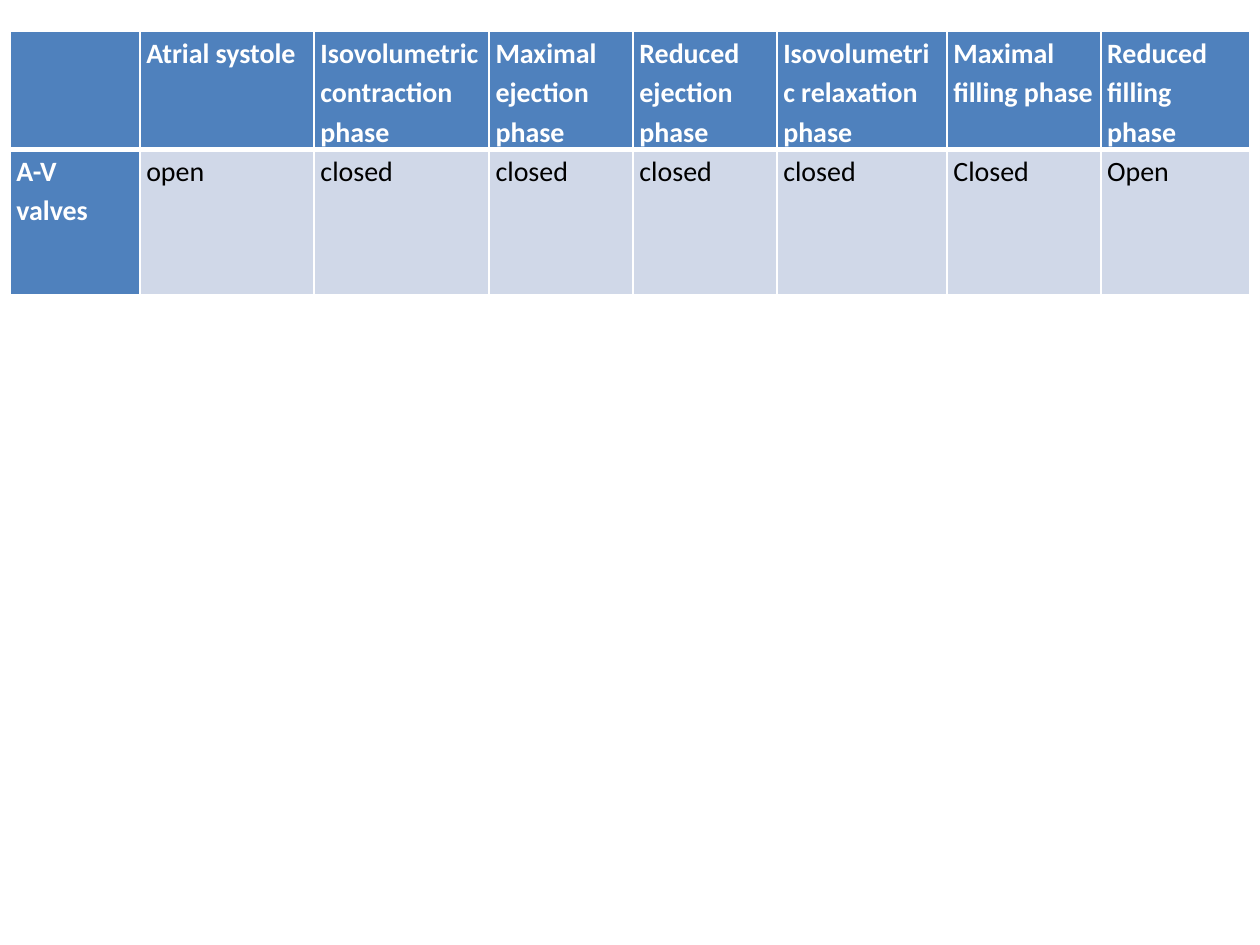
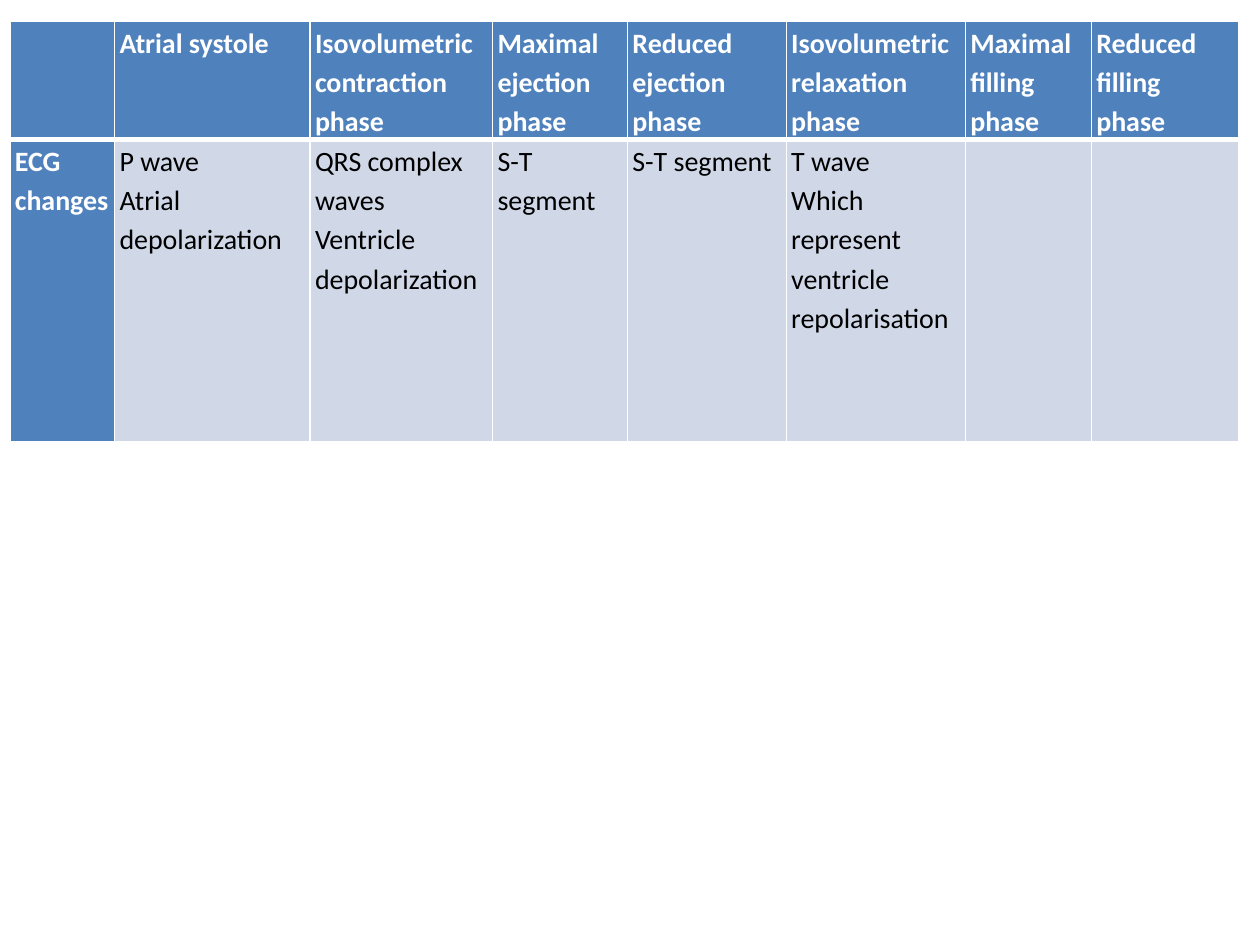
from lxml.etree import SubElement
from pptx import Presentation
from pptx.dml.color import RGBColor
from pptx.oxml.ns import qn
from pptx.util import Cm, Pt

BLUE = RGBColor(0x4F, 0x81, 0xBD)
PALE_BLUE = RGBColor(0xD0, 0xD8, 0xE8)
WHITE = RGBColor(0xFF, 0xFF, 0xFF)
BLACK = RGBColor(0x00, 0x00, 0x00)

LEFT = Cm(0.2)
HEADER_HEIGHT = Cm(2.34)
THIN, THICK = Pt(1), Pt(3)

LABEL_FORMAT = {"name": "Calibri", "size": Pt(16), "bold": True}
VALUE_FORMAT = {"name": "Calibri", "size": Pt(16), "bold": False}

PHASES = [
    "",
    "Atrial systole",
    "Isovolumetric contraction phase",
    "Maximal ejection phase",
    "Reduced ejection phase",
    "Isovolumetric relaxation phase",
    "Maximal filling phase",
    "Reduced filling phase",
]

TABLES = [
    {
        "top": 0.64,
        "inset": 0.13,
        "body_height": 2.92,
        "widths": [2.62, 3.51, 3.53, 2.9, 2.9, 3.43, 3.1, 3.0],
        "header": PHASES,
        "body": ["A-V valves", "open", "closed", "closed", "closed",
                 "closed", "Closed", "Open"],
    },
    {
        "top": 0.43,
        "inset": 0.1,
        "body_height": 6.1,
        "widths": [2.11, 3.94, 3.68, 2.72, 3.2, 3.61, 2.54, 2.97],
        "header": PHASES[:6] + ["Maximal filling\nphase"] + PHASES[7:],
        "body": ["ECG changes", "P wave\nAtrial depolarization",
                 "QRS complex waves\nVentricle depolarization",
                 "S-T segment", "S-T segment",
                 "T wave\nWhich represent ventricle repolarisation", "", ""],
    },
]


def set_borders(cell, top, bottom):
    properties = cell._tc.get_or_add_tcPr()
    widths = {"a:lnL": THIN, "a:lnR": THIN, "a:lnT": top, "a:lnB": bottom}
    for position, (side, width) in enumerate(widths.items()):
        line = SubElement(properties, qn(side), w=str(width))
        fill = SubElement(line, qn("a:solidFill"))
        SubElement(fill, qn("a:srgbClr"), val=str(WHITE))
        properties.insert(position, line)


def write_cell(cell, text, is_label, inset):
    cell.fill.solid()
    cell.fill.fore_color.rgb = BLUE if is_label else PALE_BLUE
    margins = {"margin_left": inset, "margin_right": inset,
               "margin_top": 0, "margin_bottom": 0}
    for name, value in margins.items():
        setattr(cell, name, value)
    if not text:
        return
    cell.text = text
    for para in cell.text_frame.paragraphs:
        para.line_spacing = 1.15
        for span in para.runs:
            span.font.color.rgb = WHITE if is_label else BLACK
            for name, value in (LABEL_FORMAT if is_label else VALUE_FORMAT).items():
                setattr(span.font, name, value)


deck = Presentation()
deck.slide_width = Cm(25.4)
deck.slide_height = Cm(19.05)

for content in TABLES:
    page = deck.slides.add_slide(deck.slide_layouts[6])
    body_height = Cm(content["body_height"])
    table = page.shapes.add_table(
        2, len(PHASES), LEFT, Cm(content["top"]),
        Cm(sum(content["widths"])), HEADER_HEIGHT + body_height,
    ).table
    table.rows[0].height = HEADER_HEIGHT
    table.rows[1].height = body_height
    for column, width in zip(table.columns, content["widths"]):
        column.width = Cm(width)
    for row, texts in enumerate([content["header"], content["body"]]):
        for column, text in enumerate(texts):
            cell = table.cell(row, column)
            write_cell(cell, text, row == 0 or column == 0, Cm(content["inset"]))
            if row == 0:
                set_borders(cell, THIN, THICK)
            else:
                set_borders(cell, THICK, THIN)

deck.save("out.pptx")
